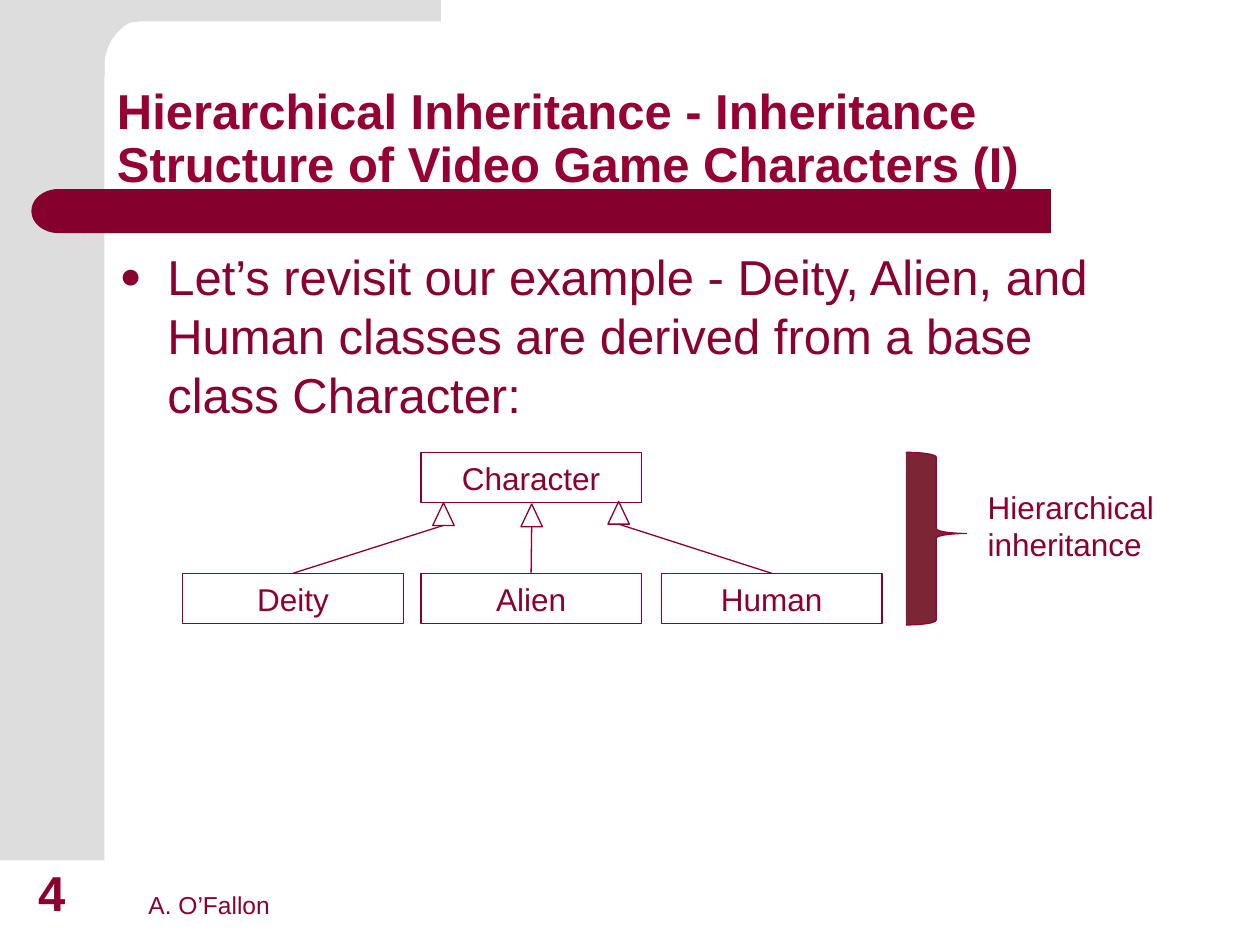
from dataclasses import dataclass
from lxml.etree import SubElement
from pptx import Presentation
from pptx.dml.color import RGBColor
from pptx.enum.shapes import MSO_CONNECTOR as Link, MSO_SHAPE as Preset
from pptx.enum.text import MSO_ANCHOR as Anchor, PP_ALIGN as Align
from pptx.oxml.ns import qn
from pptx.util import Inches, Pt


@dataclass(frozen=True)
class Theme:
    font: str = "Arial"
    ink: str = "8A002E"
    title: str = "960032"
    bar: str = "86002D"
    side: str = "DDDDDD"
    brace: str = "7B2535"
    large: int = 28
    normal: int = 18
    small: int = 14
    line: float = 0.75


@dataclass(frozen=True)
class Area:
    left: float
    top: float
    width: float
    height: float

    def lengths(self) -> list:
        return [Inches(v) for v in (self.left, self.top, self.width, self.height)]


@dataclass(frozen=True)
class ClassBox:
    name: str
    left: float
    top: float


@dataclass(frozen=True)
class Derivation:
    child: ClassBox
    tip_x: float
    tip_y: float


THEME = Theme()
BOX_WIDTH, BOX_HEIGHT = 1.75, 0.4
HEAD_WIDTH, HEAD_HEIGHT = 0.17, 0.18


def paint(shape, fill: str = "", line: str = "") -> None:
    shape.shadow.inherit = False
    if fill:
        shape.fill.solid()
        shape.fill.fore_color.rgb = RGBColor.from_string(fill)
    else:
        shape.fill.background()
    if line:
        shape.line.color.rgb = RGBColor.from_string(line)
        shape.line.width = Pt(THEME.line)
    else:
        shape.line.fill.background()


def add_preset(page, kind, area: Area, fill: str = "", line: str = ""):
    shape = page.shapes.add_shape(kind, *area.lengths())
    paint(shape, fill, line)
    return shape


def write(shape, text: str, size: int, color: str = THEME.ink, bold: bool = False,
          anchor=Anchor.TOP, align=Align.LEFT):
    frame = shape.text_frame
    for name, value in {"word_wrap": True, "vertical_anchor": anchor}.items():
        setattr(frame, name, value)
    para = frame.paragraphs[0]
    para.alignment = align
    span = para.add_run()
    span.text = text
    formats = {"name": THEME.font, "size": Pt(size), "bold": bold}
    for name, value in formats.items():
        setattr(span.font, name, value)
    span.font.color.rgb = RGBColor.from_string(color)
    return para


def add_text(page, area: Area, text: str, size: int, **formats):
    return write(page.shapes.add_textbox(*area.lengths()), text, size, **formats)


def add_bullet(para) -> None:
    props = para._p.get_or_add_pPr()
    props.set("marL", str(Inches(0.38)))
    props.set("indent", str(Inches(-0.38)))
    color = SubElement(props, qn("a:buClr"))
    SubElement(color, qn("a:srgbClr"), val=THEME.ink)
    SubElement(props, qn("a:buSzPct"), val="75000")
    SubElement(props, qn("a:buFont"), typeface=THEME.font)
    SubElement(props, qn("a:buChar"), char="●")


def add_class(page, item: ClassBox) -> None:
    area = Area(item.left, item.top, BOX_WIDTH, BOX_HEIGHT)
    box = add_preset(page, Preset.RECTANGLE, area, line=THEME.ink)
    write(box, item.name, THEME.normal, anchor=Anchor.MIDDLE, align=Align.CENTER)


def add_derivation(page, item: Derivation) -> None:
    head = Area(item.tip_x - HEAD_WIDTH / 2, item.tip_y, HEAD_WIDTH, HEAD_HEIGHT)
    add_preset(page, Preset.ISOSCELES_TRIANGLE, head, line=THEME.ink)
    ends = (item.tip_x, item.tip_y + HEAD_HEIGHT,
            item.child.left + BOX_WIDTH / 2, item.child.top)
    link = page.shapes.add_connector(Link.STRAIGHT, *[Inches(v) for v in ends])
    link.line.color.rgb = RGBColor.from_string(THEME.ink)
    link.line.width = Pt(THEME.line)
    SubElement(link._element.spPr, qn("a:effectLst"))


def add_frame(page) -> None:
    # Grey side band and the rounded inner corner beside it
    add_preset(page, Preset.RECTANGLE, Area(0, 0, 0.83, 6.83), THEME.side)
    curve = [(1.16, 0.17), (1.11, 0.17), (1.03, 0.18), (0.98, 0.21), (0.93, 0.26),
             (0.89, 0.31), (0.86, 0.37), (0.84, 0.43), (0.83, 0.49), (0.83, 0.61)]
    outline = [(3.5, 0), (3.5, 0.17), *curve, (0.5, 0.61), (0.5, 0)]
    points = [(Inches(x), Inches(y)) for x, y in outline]
    builder = page.shapes.build_freeform(*points[0], scale=1.0)
    builder.add_line_segments(points[1:], close=True)
    paint(builder.convert_to_shape(), THEME.side)

    # Title bar with a rounded left end
    add_preset(page, Preset.RECTANGLE, Area(0.67, 1.5, 7.67, 0.35), THEME.bar)
    cap = add_preset(page, Preset.FLOWCHART_DELAY, Area(0.25, 1.5, 0.43, 0.35), THEME.bar)
    cap._element.spPr.get_or_add_xfrm().set("flipH", "1")


def add_diagram(page) -> None:
    base = ClassBox("Character", 3.34, 3.59)
    deity, alien, human = [ClassBox(name, left, 4.55) for name, left in
                           (("Deity", 1.45), ("Alien", 3.34), ("Human", 5.25))]
    for item in (base, deity, alien, human):
        add_class(page, item)
    for item in (Derivation(deity, 3.52, 3.99), Derivation(alien, 4.22, 4),
                 Derivation(human, 4.91, 3.98)):
        add_derivation(page, item)

    # Brace and its label
    brace = add_preset(page, Preset.RIGHT_BRACE, Area(7.19, 3.59, 0.48, 1.37),
                       THEME.brace, THEME.title)
    brace.adjustments[0], brace.adjustments[1] = 0.08, 0.47
    add_text(page, Area(7.74, 3.82, 1.6, 0.71), "Hierarchical inheritance", THEME.normal)


def main() -> None:
    deck = Presentation()
    deck.slide_width, deck.slide_height = Inches(10), Inches(7.5)
    page = deck.slides.add_slide(deck.slide_layouts[6])
    add_frame(page)

    # Title and body
    title = add_text(page, Area(0.83, 0.33, 8.67, 1.25),
                     "Hierarchical Inheritance - Inheritance Structure of "
                     "Video Game Characters (I)",
                     THEME.large, color=THEME.title, bold=True, anchor=Anchor.BOTTOM)
    title.line_spacing = 0.9
    body = add_text(page, Area(0.85, 1.91, 8.41, 4.07),
                    "Let’s revisit our example - Deity, Alien, and Human classes "
                    "are derived from a base class Character:", THEME.large)
    add_bullet(body)
    add_diagram(page)

    # Footer
    add_text(page, Area(1.08, 6.83, 3.75, 0.52), "A. O’Fallon", THEME.small,
             anchor=Anchor.BOTTOM)
    add_text(page, Area(0.09, 6.83, 0.64, 0.53), "4", THEME.large, bold=True,
             anchor=Anchor.BOTTOM, align=Align.CENTER)
    deck.save("out.pptx")


if __name__ == "__main__":
    main()
